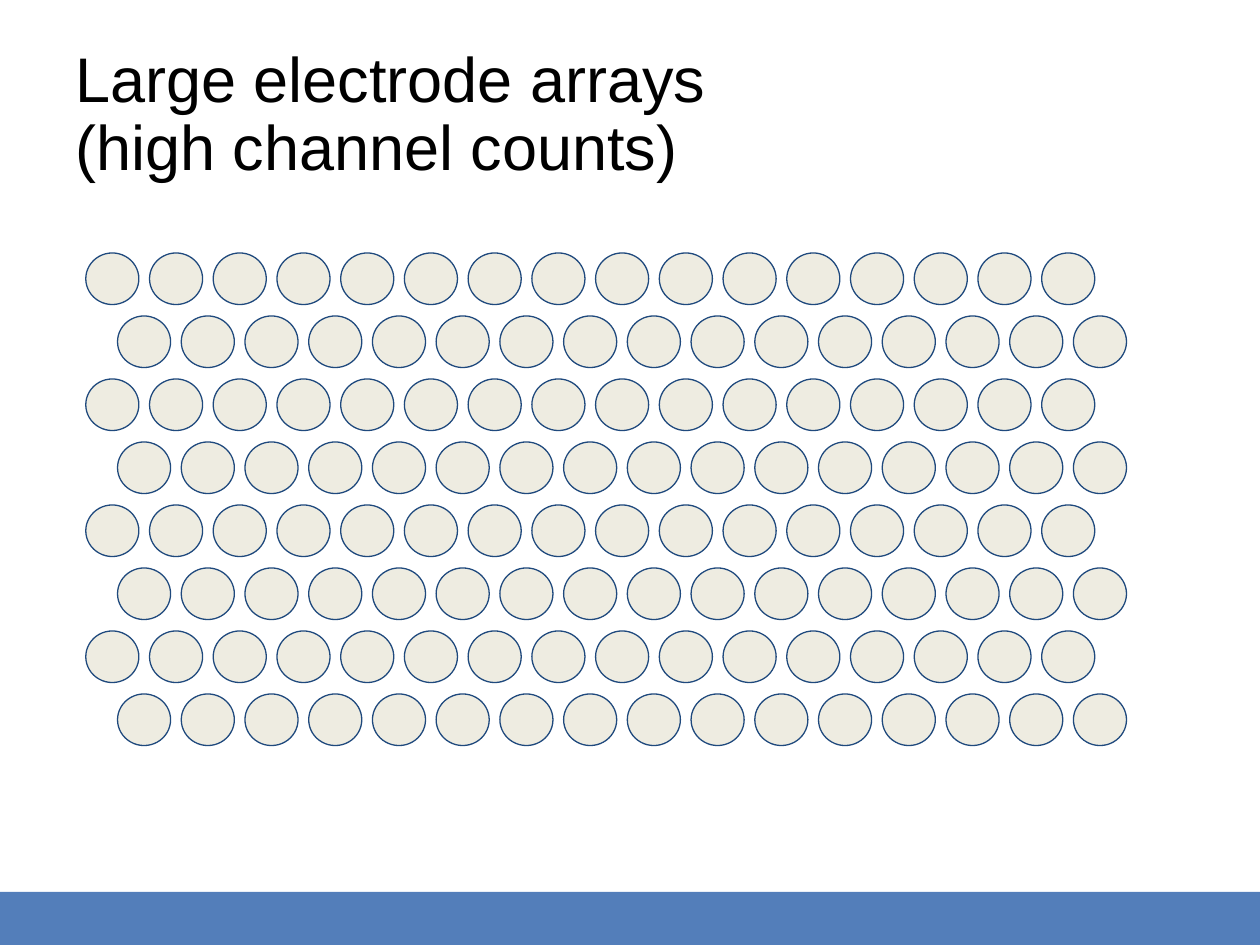
from pptx import Presentation
from pptx.dml.color import RGBColor
from pptx.enum.shapes import MSO_SHAPE as Shape
from pptx.enum.text import MSO_ANCHOR as Anchor, MSO_AUTO_SIZE as AutoSize, PP_ALIGN as Align
from pptx.util import Cm, Pt

TITLE_LINES = ["Large electrode arrays", "(high channel counts)"]
FONT, TITLE_SIZE = "Arial", 36
BLACK, BAND_BLUE = "000000", "537EBA"
ELECTRODE_FILL, ELECTRODE_LINE = "EEECE1", "1F497D"

# Lengths in centimetres
SLIDE_WIDTH, SLIDE_HEIGHT = 25.4, 19.05
BAND_HEIGHT = 1.07
ROWS, COLUMNS = 8, 16
FIRST_LEFT, LAST_LEFT = 1.73, 21.0
FIRST_TOP, ROW_PITCH = 5.1, 1.27
ODD_ROW_SHIFT = 0.64
ELECTRODE_WIDTH, ELECTRODE_HEIGHT = 1.07, 1.04


def color(code):
    return RGBColor.from_string(code)


def add_filled(shapes, kind, left, top, width, height, fill, line=None):
    """Add a flat preset shape, outlined only when a line colour is given."""
    shape = shapes.add_shape(kind, Cm(left), Cm(top), Cm(width), Cm(height))
    shape.shadow.inherit = False
    shape.fill.solid()
    shape.fill.fore_color.rgb = color(fill)
    if line:
        shape.line.color.rgb = color(line)
        shape.line.width = Pt(0.75)
    else:
        shape.line.fill.background()


def set_title(title):
    title.left, title.top, title.width, title.height = Cm(1.27), Cm(0.76), Cm(22.86), Cm(3.18)
    frame = title.text_frame
    frame.text = "\v".join(TITLE_LINES)
    frame.word_wrap = True
    frame.auto_size = AutoSize.NONE
    frame.vertical_anchor = Anchor.MIDDLE
    frame.margin_left = frame.margin_right = Cm(0.25)
    frame.margin_top = frame.margin_bottom = Cm(0.25)
    para = frame.paragraphs[0]
    para.alignment = Align.LEFT
    para.line_spacing = 0.9
    for span in para.runs:
        span.font.name = FONT
        span.font.size = Pt(TITLE_SIZE)
        span.font.color.rgb = color(BLACK)


def add_electrodes(page):
    """Draw the staggered array, one group per row."""
    pitch = (LAST_LEFT - FIRST_LEFT) / (COLUMNS - 1)
    for row in range(ROWS):
        group = page.shapes.add_group_shape()
        left = FIRST_LEFT + row % 2 * ODD_ROW_SHIFT
        top = FIRST_TOP + row * ROW_PITCH
        for column in range(COLUMNS):
            add_filled(group.shapes, Shape.OVAL, left + column * pitch, top,
                       ELECTRODE_WIDTH, ELECTRODE_HEIGHT, ELECTRODE_FILL, ELECTRODE_LINE)


def main():
    deck = Presentation()
    deck.slide_width, deck.slide_height = Cm(SLIDE_WIDTH), Cm(SLIDE_HEIGHT)
    page = deck.slides.add_slide(deck.slide_layouts[5])
    add_filled(page.shapes, Shape.RECTANGLE, 0, SLIDE_HEIGHT - BAND_HEIGHT,
               SLIDE_WIDTH, BAND_HEIGHT, BAND_BLUE)
    set_title(page.shapes.title)
    add_electrodes(page)
    deck.save("out.pptx")


if __name__ == "__main__":
    main()
